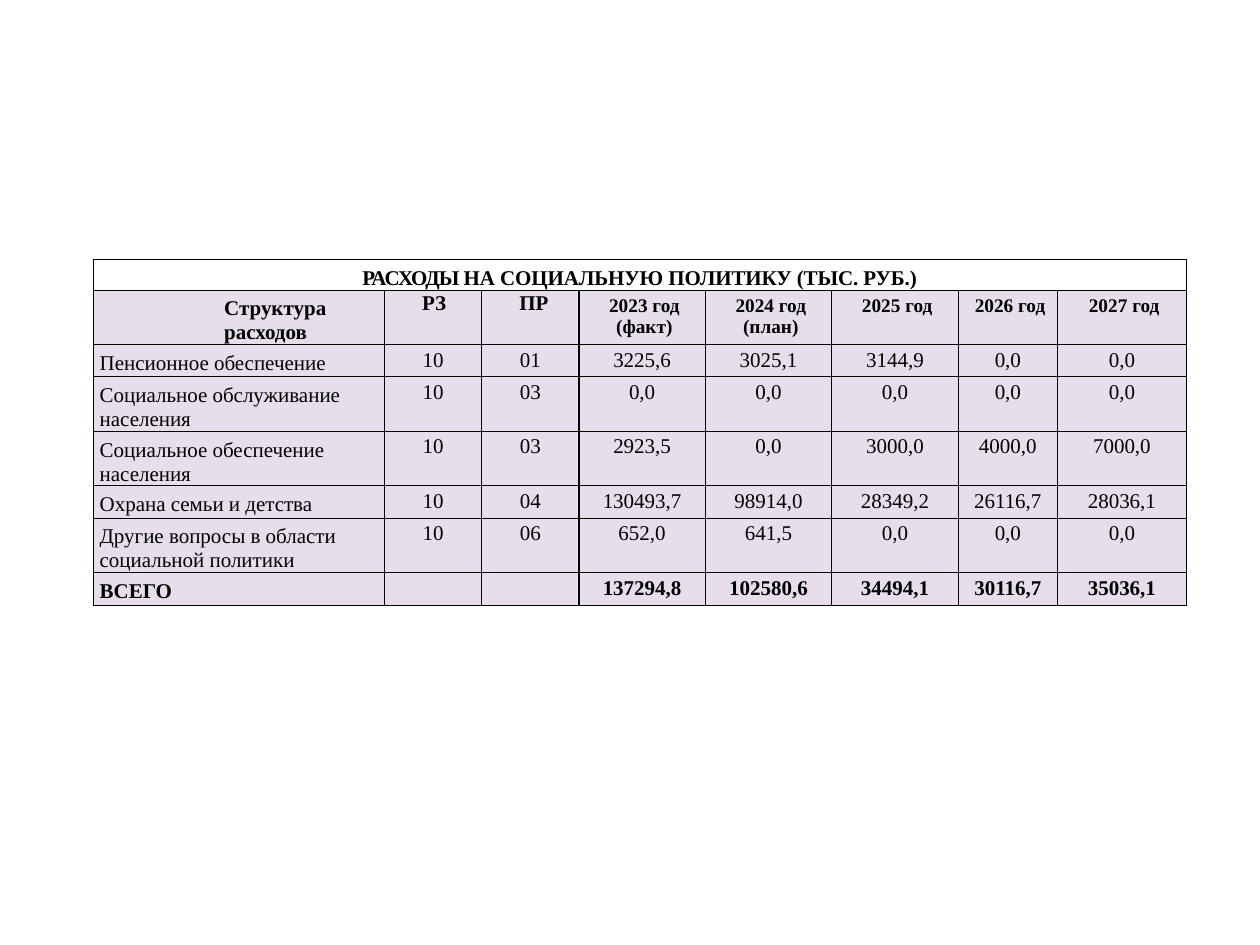
from lxml import etree
from pptx import Presentation
from pptx.dml.color import RGBColor
from pptx.enum import text
from pptx.oxml import ns
from pptx.util import Cm, Pt

# Content
TITLE = [("РАСХОДЫ ", -0.6), ("НА СОЦИАЛЬНУЮ ПОЛИТИКУ (ТЫС. РУБ.)", -0.05)]
HEADER = ["Структура расходов", "РЗ", "ПР", "2023 год (факт)", "2024 год (план)",
          "2025 год", "2026 год", "2027 год"]
EXPENSES = [
    ["Пенсионное обеспечение", "10", "01", "3225,6", "3025,1", "3144,9", "0,0", "0,0"],
    ["Социальное обслуживание населения", "10", "03", "0,0", "0,0", "0,0", "0,0", "0,0"],
    ["Социальное обеспечение населения", "10", "03", "2923,5", "0,0", "3000,0", "4000,0", "7000,0"],
    ["Охрана семьи и детства", "10", "04", "130493,7", "98914,0", "28349,2", "26116,7", "28036,1"],
    ["Другие вопросы в области социальной политики", "10", "06", "652,0", "641,5", "0,0", "0,0", "0,0"],
]
TOTAL = ["ВСЕГО", "", "", "137294,8", "102580,6", "34494,1", "30116,7", "35036,1"]
ROWS = [HEADER, *EXPENSES, TOTAL]

# Layout, in centimetres
LEFT, TOP = 1.88, 5.23
COLUMN_WIDTHS = [5.87, 1.96, 1.96, 2.55, 2.55, 2.55, 2.0, 2.6]
SINGLE, DOUBLE = 0.65, 1.1
ROW_HEIGHTS = [0.61, DOUBLE, SINGLE, DOUBLE, DOUBLE, SINGLE, DOUBLE, SINGLE]
THICK_EDGES = (2, 3)  # column edges on both sides of "ПР"

FONT = "Times New Roman"
BLACK = RGBColor(0x00, 0x00, 0x00)
LILAC = RGBColor(0xE6, 0xDF, 0xEB)


def write(cell, runs, size=12, bold=False, centred=True, top=0.08, indent=0, line=None):
    """Fill a cell with runs given as (text, letter spacing in points)."""
    cell.margin_left = cell.margin_right = cell.margin_bottom = 0
    cell.margin_top = Cm(top)
    paragraph = cell.text_frame.paragraphs[0]
    paragraph.alignment = text.PP_ALIGN.CENTER if centred else text.PP_ALIGN.LEFT
    if line:
        paragraph.line_spacing = Pt(line)
    if indent:
        paragraph._p.get_or_add_pPr().set("marL", str(Cm(indent)))
    for words, spacing in runs:
        run = paragraph.add_run()
        run.text = words
        run.font.name, run.font.size, run.font.bold = FONT, Pt(size), bold
        run.font.color.rgb = BLACK
        if spacing:
            run._r.get_or_add_rPr().set("spc", str(round(spacing * 100)))
    if not runs:
        etree.SubElement(paragraph._p, ns.qn("a:endParaRPr"), sz=str(size * 100))


def set_borders(cell, left=0.5, right=0.5):
    properties = cell._tc.get_or_add_tcPr()
    for side, width in (("L", left), ("R", right), ("T", 0.5), ("B", 0.5)):
        line = etree.SubElement(properties, ns.qn(f"a:ln{side}"), w=str(Pt(width)))
        fill = etree.SubElement(line, ns.qn("a:solidFill"))
        etree.SubElement(fill, ns.qn("a:srgbClr"), val=str(BLACK))


def cell_format(row, column):
    if row == 0:
        if column == 0:
            return dict(bold=True, centred=False, top=0.13, indent=2.64, line=13.7)
        if column < 3:
            return dict(bold=True, centred=False, top=0.03, indent=0.76)
        return dict(bold=True, size=11, top=0.1, indent=0.09)
    bold = ROWS[row] is TOTAL
    if column == 0:
        return dict(bold=bold, centred=False, top=0.13, indent=0.13, line=13.7)
    return dict(bold=bold)


presentation = Presentation()
presentation.slide_width, presentation.slide_height = Cm(25.4), Cm(19.05)
slide = presentation.slides.add_slide(presentation.slide_layouts[6])

# Table grid
table = slide.shapes.add_table(
    len(ROW_HEIGHTS), len(COLUMN_WIDTHS), Cm(LEFT), Cm(TOP),
    Cm(sum(COLUMN_WIDTHS)), Cm(sum(ROW_HEIGHTS))).table
table.first_row = table.horz_banding = False
for column, width in zip(table.columns, COLUMN_WIDTHS):
    column.width = Cm(width)
for row, height in zip(table.rows, ROW_HEIGHTS):
    row.height = Cm(height)

# Title row across the whole table
title = table.cell(0, 0)
title.merge(table.cell(0, len(COLUMN_WIDTHS) - 1))
write(title, TITLE, bold=True, top=0.13, line=13.7)
for cell in table.rows[0].cells:
    set_borders(cell)
    cell.fill.background()

# Header, expenses and total
for row, values in enumerate(ROWS):
    for column, value in enumerate(values):
        cell = table.cell(row + 1, column)
        write(cell, [(value, 0)] if value else [], **cell_format(row, column))
        set_borders(cell, left=1 if column in THICK_EDGES else 0.5,
                    right=1 if column + 1 in THICK_EDGES else 0.5)
        cell.fill.solid()
        cell.fill.fore_color.rgb = LILAC

presentation.save("out.pptx")
